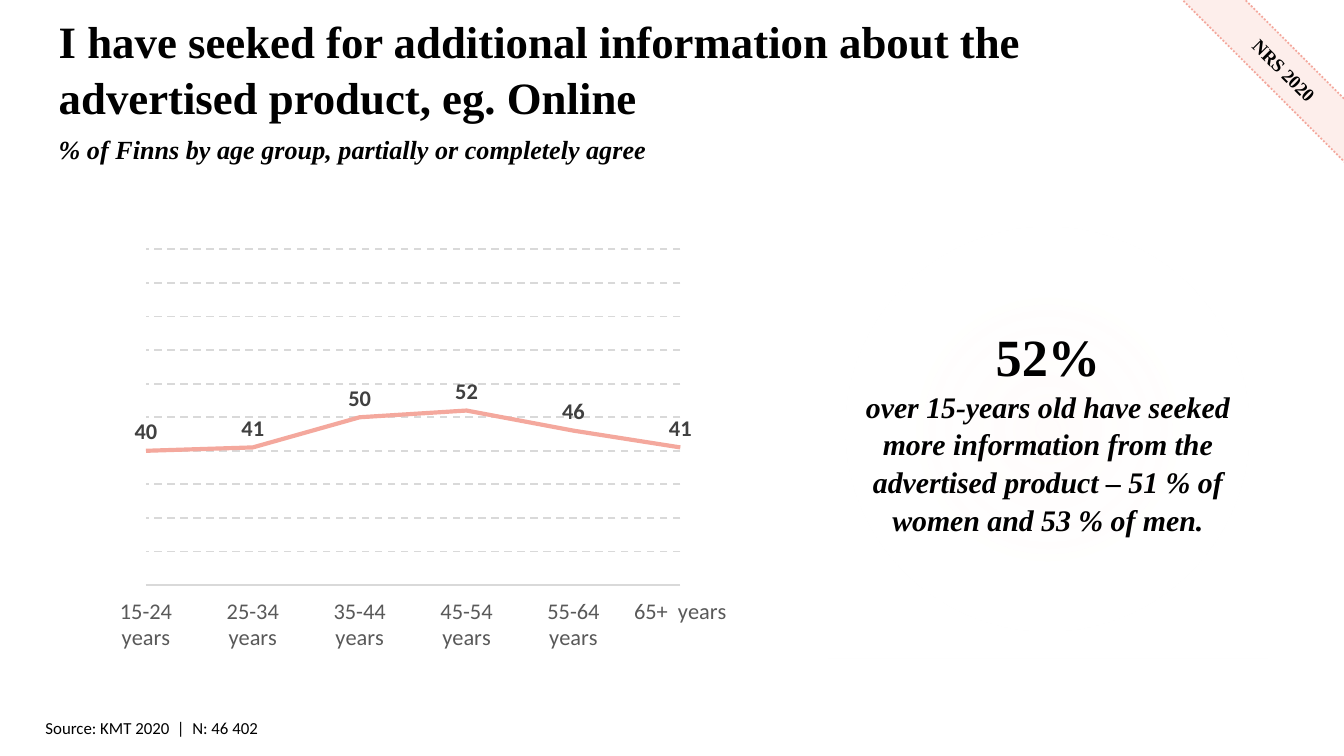
from lxml import etree
from pptx import Presentation
from pptx.chart.data import CategoryChartData
from pptx.dml.color import RGBColor
from pptx.enum.chart import XL_CHART_TYPE, XL_LABEL_POSITION, XL_TICK_LABEL_POSITION, XL_TICK_MARK
from pptx.enum.dml import MSO_LINE
from pptx.enum.shapes import MSO_SHAPE
from pptx.enum.text import MSO_ANCHOR, PP_ALIGN
from pptx.oxml import parse_xml
from pptx.oxml.ns import nsdecls, qn
from pptx.util import Cm, Pt

SERIF, SANS = "Times New Roman", "Calibri"
BLACK, CORAL, BLUSH, GRID = "000000", "F4A89D", "FDEEEB", "D9D9D9"


def rgb(value):
    return RGBColor.from_string(value)


def style_font(font, size, name, color=BLACK, bold=False, italic=False):
    font.size, font.name, font.bold, font.italic = Pt(size), name, bold, italic
    font.color.rgb = rgb(color)


class SlideBuilder:
    def __init__(self, slide):
        self.s = slide

    def fill_text(self, sp, runs, font=SERIF, anchor=MSO_ANCHOR.TOP,
                  align=PP_ALIGN.LEFT, spacing=1.0):
        """Each run is (text, size, bold, italic); runs are split by line breaks."""
        tf = sp.text_frame
        tf.word_wrap = True
        tf.vertical_anchor = anchor
        p = tf.paragraphs[0]
        p.alignment, p.line_spacing = align, spacing
        for i, (text, size, bold, italic) in enumerate(runs):
            if i:
                p.add_line_break()
            r = p.add_run()
            r.text = text
            style_font(r.font, size, font, BLACK, bold, italic)

    def text(self, box, runs, **options):
        sp = self.s.shapes.add_textbox(*map(Cm, box))
        self.fill_text(sp, runs, **options)

    def panel(self, box, runs, **options):
        sp = self.s.shapes.add_shape(MSO_SHAPE.RECTANGLE, *map(Cm, box))
        sp.shadow.inherit = False
        sp.line.fill.background()
        self.fill_text(sp, runs, anchor=MSO_ANCHOR.MIDDLE, align=PP_ALIGN.CENTER, **options)
        return sp

    def ribbon(self, box, label):
        sp = self.panel(box, [(label, 10, True, False)])
        sp.rotation = 45
        sp.fill.solid()
        sp.fill.fore_color.rgb = rgb(BLUSH)
        sp.line.color.rgb = rgb(CORAL)
        sp.line.width = Pt(1)
        sp.line.dash_style = MSO_LINE.ROUND_DOT

    def glow_panel(self, box, runs):
        sp = self.panel(box, runs, spacing=1.05)
        glow = parse_xml(
            f'<a:gradFill {nsdecls("a")} rotWithShape="1"><a:gsLst>'
            '<a:gs pos="0"><a:srgbClr val="FEF6F4"><a:alpha val="33000"/></a:srgbClr></a:gs>'
            '<a:gs pos="64000"><a:srgbClr val="FFFFFF"><a:alpha val="0"/></a:srgbClr></a:gs>'
            '</a:gsLst><a:path path="circle">'
            '<a:fillToRect l="50000" t="50000" r="50000" b="50000"/></a:path></a:gradFill>')
        sp._element.spPr.find(qn("a:prstGeom")).addnext(glow)

    def line_chart(self, box, categories, values):
        data = CategoryChartData()
        data.categories = categories
        data.add_series("Series 1", values)
        chart = self.s.shapes.add_chart(XL_CHART_TYPE.LINE, *map(Cm, box), data).chart
        style_font(chart.font, 10, SANS)
        chart.has_legend = chart.has_title = False

        # Axes
        cat, val = chart.category_axis, chart.value_axis
        cat.major_tick_mark = cat.minor_tick_mark = XL_TICK_MARK.NONE
        cat.tick_label_position = XL_TICK_LABEL_POSITION.LOW
        style_font(cat.tick_labels.font, 12, SANS, "595959")
        cat.format.line.color.rgb = rgb(GRID)
        cat.format.line.width = Pt(0.75)
        val.minimum_scale, val.maximum_scale, val.major_unit = 0, 100, 10
        val.visible = False
        grid = val.major_gridlines.format.line
        grid.color.rgb = rgb(GRID)
        grid.width = Pt(1)
        grid.dash_style = MSO_LINE.DASH
        # Start the line on the edge of the plot
        val._element.find(qn("c:majorUnit")).addprevious(
            parse_xml(f'<c:crossBetween {nsdecls("c")} val="midCat"/>'))

        # Series and value labels
        plot = chart.plots[0]
        plot.vary_by_categories = False
        series = plot.series[0]
        series.smooth = False
        series.format.line.color.rgb = rgb(CORAL)
        series.format.line.width = Pt(2.25)
        labels = series.data_labels
        labels.show_value = True
        labels.position = XL_LABEL_POSITION.ABOVE
        style_font(labels.font, 12, SANS, "404040", True)

        # Inner plot position and translucent background
        plot_area = chart._chartSpace.chart.plotArea
        for old in plot_area.findall(qn("c:layout")):
            plot_area.remove(old)
        layout = etree.Element(qn("c:layout"))
        manual = etree.SubElement(layout, qn("c:manualLayout"))
        settings = dict(layoutTarget="inner", xMode="edge", yMode="edge",
                        x="0.126", y="0.108", w="0.786", h="0.733")
        for tag, value in settings.items():
            etree.SubElement(manual, qn(f"c:{tag}")).set("val", value)
        plot_area.insert(0, layout)
        chart._chartSpace.chart.addnext(parse_xml(
            f'<c:spPr {nsdecls("c", "a")}><a:solidFill><a:srgbClr val="FFFFFF">'
            '<a:alpha val="88000"/></a:srgbClr></a:solidFill><a:ln><a:noFill/></a:ln></c:spPr>'))


def main():
    prs = Presentation()
    prs.slide_width, prs.slide_height = Cm(25.4), Cm(14.29)
    b = SlideBuilder(prs.slides.add_slide(prs.slide_layouts[6]))

    # Source line and corner ribbon
    b.text((0.61, 13.44, 17.73, 0.74),
           [("Source: KMT 2020  |  N: 46 402", 9, False, False)], font=SANS)
    b.ribbon((21.41, 0.91, 5.72, 0.84), "NRS 2020")

    # Key figure
    b.glow_panel((15.65, 3.78, 8.31, 8.66), [
        ("52%", 28, True, False),
        ("over 15-years old have seeked more information from the advertised "
         "product – 51 % of women and 53 % of men.", 16, True, True)])

    # Share by age group
    ages = ["15-24 years", "25-34 years", "35-44 years",
            "45-54 years", "55-64 years", "65+  years"]
    b.line_chart((1.14, 3.78, 12.85, 8.66), ages, (40, 41, 50, 52, 46, 41))

    # Title and subtitle
    b.text((0.86, 0.74, 20.24, 1.07),
           [("I have seeked for additional information about the advertised "
             "product, eg. Online", 24, True, False)],
           anchor=MSO_ANCHOR.MIDDLE, spacing=1.05)
    b.text((0.86, 2.39, 23.67, 0.84),
           [("% of Finns by age group, partially or completely agree", 14, True, True)])

    prs.save("out.pptx")


if __name__ == "__main__":
    main()
